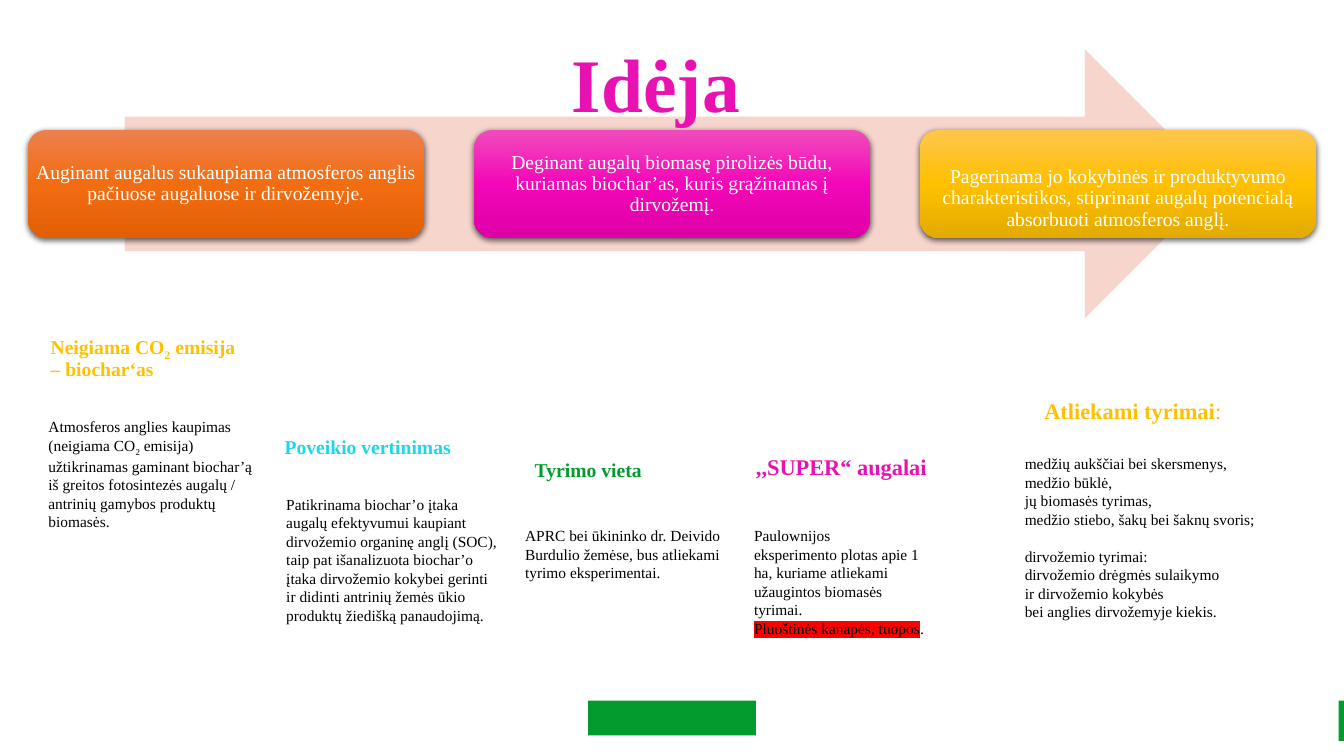
from lxml.etree import SubElement
from pptx import Presentation
from pptx.dml.color import RGBColor
from pptx.enum.shapes import MSO_SHAPE as Shape
from pptx.enum.text import MSO_ANCHOR as Anchor, MSO_AUTO_SIZE as AutoSize, PP_ALIGN as Align
from pptx.oxml.ns import qn
from pptx.util import Pt

COLORS = {
    "green": "029B2D", "gold": "FFC000", "cyan": "1BD8E8", "magenta": "E812B3",
    "black": "000000", "white": "FFFFFF", "red": "FF0000", "blush": "F6D5CD",
}


def write(shape, paragraphs, size=11, color="black", bold=False, align=Align.LEFT,
          anchor=Anchor.TOP, spacing=1.0, insets=(0, 0, 0, 0), wrap=True, gaps={}):
    frame = shape.text_frame
    frame.auto_size = AutoSize.NONE
    frame.word_wrap = wrap
    frame.vertical_anchor = anchor
    frame.margin_left, frame.margin_top, frame.margin_right, frame.margin_bottom = map(Pt, insets)
    for index, spans in enumerate(paragraphs):
        para = frame.paragraphs[0] if index == 0 else frame.add_paragraph()
        para.alignment = align
        para.line_spacing = spacing
        para.space_before = Pt(gaps.get(index, 0))
        for item in [spans] if isinstance(spans, str) else spans:
            text, look = (item, {}) if isinstance(item, str) else item
            span = para.add_run()
            span.text = text
            font = span.font
            font.size = Pt(size)
            font.bold = look.get("bold", bold)
            font.color.rgb = RGBColor.from_string(COLORS[color])
            properties = span._r.get_or_add_rPr()
            if "baseline" in look:
                properties.set("baseline", str(look["baseline"]))
            if "highlight" in look:
                marker = SubElement(properties, qn("a:highlight"))
                SubElement(marker, qn("a:srgbClr"), val=COLORS[look["highlight"]])
            font.name = "Times New Roman"


def add_block(kind, place, fill=None):
    shape = page.shapes.add_shape(kind, *map(Pt, place))
    shape.shadow.inherit = False
    shape.line.fill.background()
    if fill:
        shape.fill.solid()
        shape.fill.fore_color.rgb = RGBColor.from_string(COLORS[fill])
    return shape


deck = Presentation()
deck.slide_width, deck.slide_height = Pt(960), Pt(540)
page = deck.slides.add_slide(deck.slide_layouts[5])

add_block(Shape.RECTANGLE, (956.2, 500.4, 3.8, 28.8), "green")
add_block(Shape.RECTANGLE, (420, 500.4, 120, 25), "green")

subscript = ("2", {"baseline": -25000})
columns = [
    ((36.2, 239.8, 138, 46), ["Neigiama CO", subscript, " emisija – biochar‘as"], 14, "gold",
     (34.6, 298.2, 153.4, 148),
     [["Atmosferos anglies kaupimas (neigiama CO", subscript,
       " emisija) užtikrinamas gaminant biochar’ą iš greitos fotosintezės augalų / "
       "antrinių gamybos produktų biomasės."]], {}),
    ((203.3, 312.5, 137, 47.5), "Poveikio vertinimas", 14, "cyan",
     (204.5, 353.5, 153.4, 164),
     ["Patikrinama biochar’o įtaka augalų efektyvumui kaupiant dirvožemio organinę anglį (SOC), "
      "taip pat išanalizuota biochar’o įtaka dirvožemio kokybei gerinti ir didinti antrinių "
      "žemės ūkio produktų žiedišką panaudojimą."], {}),
    ((381.9, 329, 93, 24), "Tyrimo vieta", 14, "green",
     (375.1, 376, 144, 102),
     ["APRC bei ūkininko dr. Deivido Burdulio žemėse, bus atliekami tyrimo eksperimentai."], {}),
    ((540, 325.7, 137, 24), ",,SUPER“ augalai", 16, "magenta",
     (538.6, 376, 128, 93),
     ["Paulownijos",
      "eksperimento plotas apie 1 ha, kuriame atliekami užaugintos biomasės tyrimai.",
      [("Pluoštinės kanapės, tuopos", {"highlight": "red"}), "."]], {}),
    ((746, 285.8, 142.6, 43), ["Atliekami tyrimai", (":", {"bold": False})], 16, "gold",
     (732, 324.7, 171.4, 93),
     ["medžių aukščiai bei skersmenys,", "medžio būklė,", "jų biomasės tyrimas,",
      "medžio stiebo, šakų bei šaknų svoris;", "dirvožemio tyrimai:",
      "dirvožemio drėgmės sulaikymo", "ir dirvožemio kokybės",
      "bei anglies dirvožemyje kiekis."], {4: 13}),
]
for heading_place, heading, size, color, body_place, body, gaps in columns:
    heading_box = page.shapes.add_textbox(*map(Pt, heading_place))
    write(heading_box, [heading], size=size, color=color, bold=True, spacing=0.9)
    body_box = page.shapes.add_textbox(*map(Pt, body_place))
    write(body_box, body, gaps=gaps)

add_block(Shape.RIGHT_ARROW, (89, 35.2, 782, 192.2), "blush")

steps = [
    ("Auginant augalus sukaupiama atmosferos anglis pačiuose augaluose ir dirvožemyje.",
     ("ED804E", "F26D11", "E35F04"), 1),
    ("Deginant augalų biomasę pirolizės būdu, kuriamas biochar’as, kuris grąžinamas į dirvožemį.",
     ("F14CBD", "F307B8", "DE00A7"), 1),
    ("Pagerinama jo kokybinės ir produktyvumo charakteristikos, stiprinant augalų potencialą "
     "absorbuoti atmosferos anglį.", ("FFC64B", "FFC000", "E3AB00"), 22),
]
for index, (text, shades, top_inset) in enumerate(steps):
    card = add_block(Shape.ROUNDED_RECTANGLE, (20.2 + index * 318.6, 92.9, 282.6, 77))
    card.fill.gradient()
    card.fill.gradient_angle = 270
    properties = card._element.spPr
    stops = properties.find(qn("a:gradFill")).find(qn("a:gsLst"))
    for stop in list(stops):
        stops.remove(stop)
    for position, shade in zip((0, 50000, 100000), shades):
        stop = SubElement(stops, qn("a:gs"), pos=str(position))
        SubElement(stop, qn("a:srgbClr"), val=shade)
    shadow = SubElement(properties.find(qn("a:effectLst")), qn("a:outerShdw"),
                        blurRad=str(Pt(4.5)), dist=str(Pt(1.5)), dir="5400000", rotWithShape="0")
    tint = SubElement(shadow, qn("a:srgbClr"), val=COLORS["black"])
    SubElement(tint, qn("a:alpha"), val="63000")
    write(card, [text], size=14, color="white", align=Align.CENTER, anchor=Anchor.MIDDLE,
          spacing=0.9, insets=(1, top_inset, 1, 1))

title = page.shapes.title
title.left, title.top, title.width, title.height = map(Pt, (400.8, 23, 135.4, 72.7))
write(title, ["Idėja"], size=54, color="magenta", bold=True, align=Align.CENTER,
      insets=(7.2, 3.6, 7.2, 3.6), wrap=False)
page.shapes._spTree.append(title._element)

deck.save("out.pptx")
